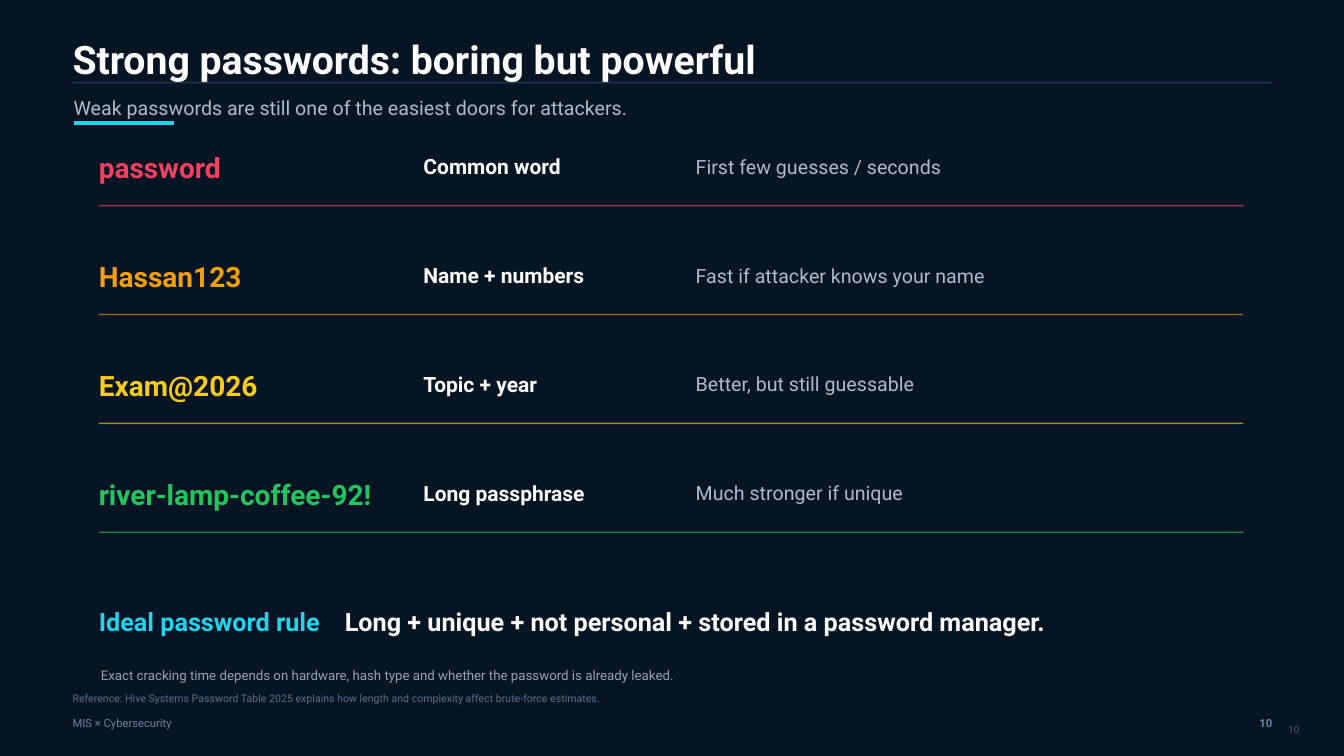
import pptx
import pptx.dml.color
import pptx.enum.shapes
import pptx.enum.text
import pptx.oxml.ns
import pptx.util
from lxml import etree
from pptx.util import Inches

FONT = "Roboto"
WHITE, MUTED, CYAN, FOOTER = "FFFFFF", "A9BCD0", "22D3EE", "6B84A0"

TITLE = "Strong passwords: boring but powerful"
# password, kind, how long it lasts, colour
PASSWORDS = [
    ("password", "Common word", "First few guesses / seconds", "F43F5E"),
    ("Hassan123", "Name + numbers", "Fast if attacker knows your name", "F59E0B"),
    ("Exam@2026", "Topic + year", "Better, but still guessable", "FACC15"),
    ("river‑lamp‑coffee‑92!", "Long passphrase", "Much stronger if unique", "22C55E"),
]
# text, (left, top, width, height), size, colour, bold
SINGLE_TEXTS = [
    ("Weak passwords are still one of the easiest doors for attackers.",
     (0.73, 0.93, 11.4, 0.28), 14, MUTED, False),
    ("Ideal password rule", (0.98, 6.05, 2.2, 0.24), 18, CYAN, True),
    ("Long + unique + not personal + stored in a password manager.",
     (3.42, 6.05, 7.4, 0.24), 18, WHITE, True),
    ("Exact cracking time depends on hardware, hash type and whether the password is already leaked.",
     (1, 6.62, 11.2, 0.16), 9.5, "94A3B8", False),
    ("Reference: Hive Systems Password Table 2025 explains how length and complexity affect brute-force estimates.",
     (0.72, 6.85, 11.8, 0.16), 7.5, "58718C", False),
    ("MIS × Cybersecurity", (0.72, 7.08, 2.4, 0.18), 8, FOOTER, False),
]
PAGE = "10"
ROW_TOP, ROW_STEP = 1.52, 1.08
ROW_LEFT, ROW_RIGHT = 0.98, 12.33

ALIGN = pptx.enum.text.PP_ALIGN
ANCHOR = pptx.enum.text.MSO_ANCHOR


def rgb(value):
    return pptx.dml.color.RGBColor.from_string(value)


def set_all(target, values):
    for key, value in values.items():
        setattr(target, key, value)


def write(holder, text, size, color, bold=False, align=ALIGN.LEFT,
          anchor=ANCHOR.MIDDLE, inset=(0, 0)):
    """Fill a text box or placeholder with one formatted paragraph."""
    frame = holder.text_frame
    across, down = (Inches(side) for side in inset)
    set_all(frame, {
        "text": text, "word_wrap": True, "vertical_anchor": anchor,
        "auto_size": pptx.enum.text.MSO_AUTO_SIZE.NONE,
        "margin_left": across, "margin_right": across,
        "margin_top": down, "margin_bottom": down,
    })
    paragraph = frame.paragraphs[0]
    paragraph.alignment = align
    set_all(paragraph.runs[0].font,
            {"name": FONT, "size": pptx.util.Pt(size), "bold": bold})
    paragraph.runs[0].font.color.rgb = rgb(color)


def add_text(slide, text, box, size, color, bold=False, **layout):
    holder = slide.shapes.add_textbox(*map(Inches, box))
    write(holder, text, size, color, bold, **layout)


def add_rule(slide, left, right, y, color, width=1, opacity=100):
    """Draw a horizontal line; opacity is in percent."""
    rule = slide.shapes.add_connector(
        pptx.enum.shapes.MSO_CONNECTOR.STRAIGHT,
        Inches(left), Inches(y), Inches(right), Inches(y))
    rule.line.width = pptx.util.Pt(width)
    rule.line.color.rgb = rgb(color)
    properties = rule._element.spPr
    qn = pptx.oxml.ns.qn
    if opacity < 100:
        tint = properties.find(".//" + qn("a:srgbClr"))
        etree.SubElement(tint, qn("a:alpha"), val=str(opacity * 1000))
    etree.SubElement(properties, qn("a:effectLst"))


def main():
    deck = pptx.Presentation()
    set_all(deck, {"slide_width": Inches(13.33), "slide_height": Inches(7.5)})
    slide = deck.slides.add_slide(deck.slide_layouts[5])
    slide.background.fill.solid()
    slide.background.fill.fore_color.rgb = rgb("071423")

    title = slide.shapes.title
    set_all(title, {"left": Inches(0.72), "top": Inches(0.35),
                    "width": Inches(11.2), "height": Inches(0.46)})
    write(title, TITLE, 28, WHITE, True)
    add_rule(slide, 0.72, 12.62, 0.82, "244966", opacity=70)
    add_rule(slide, 0.73, 1.73, 1.22, CYAN, width=3)

    for row, (password, kind, strength, color) in enumerate(PASSWORDS):
        top = ROW_TOP + row * ROW_STEP
        add_text(slide, password, (ROW_LEFT, top, 3, 0.28), 20, color, True)
        add_text(slide, kind, (4.2, top + 0.02, 2.3, 0.22), 15, WHITE, True)
        add_text(slide, strength, (6.9, top + 0.02, 4.75, 0.22), 14, MUTED)
        add_rule(slide, ROW_LEFT, ROW_RIGHT, top + 0.52, color, opacity=65)

    for entry in SINGLE_TEXTS:
        add_text(slide, *entry)
    add_text(slide, PAGE, (12.22, 7.08, 0.4, 0.18), 8, FOOTER, True, align=ALIGN.RIGHT)
    add_text(slide, PAGE, (12.68, 7.13, 0.65, 0.33), 7, "45617B",
             anchor=ANCHOR.TOP, inset=(0.1, 0.05))

    deck.save("out.pptx")


if __name__ == "__main__":
    main()
